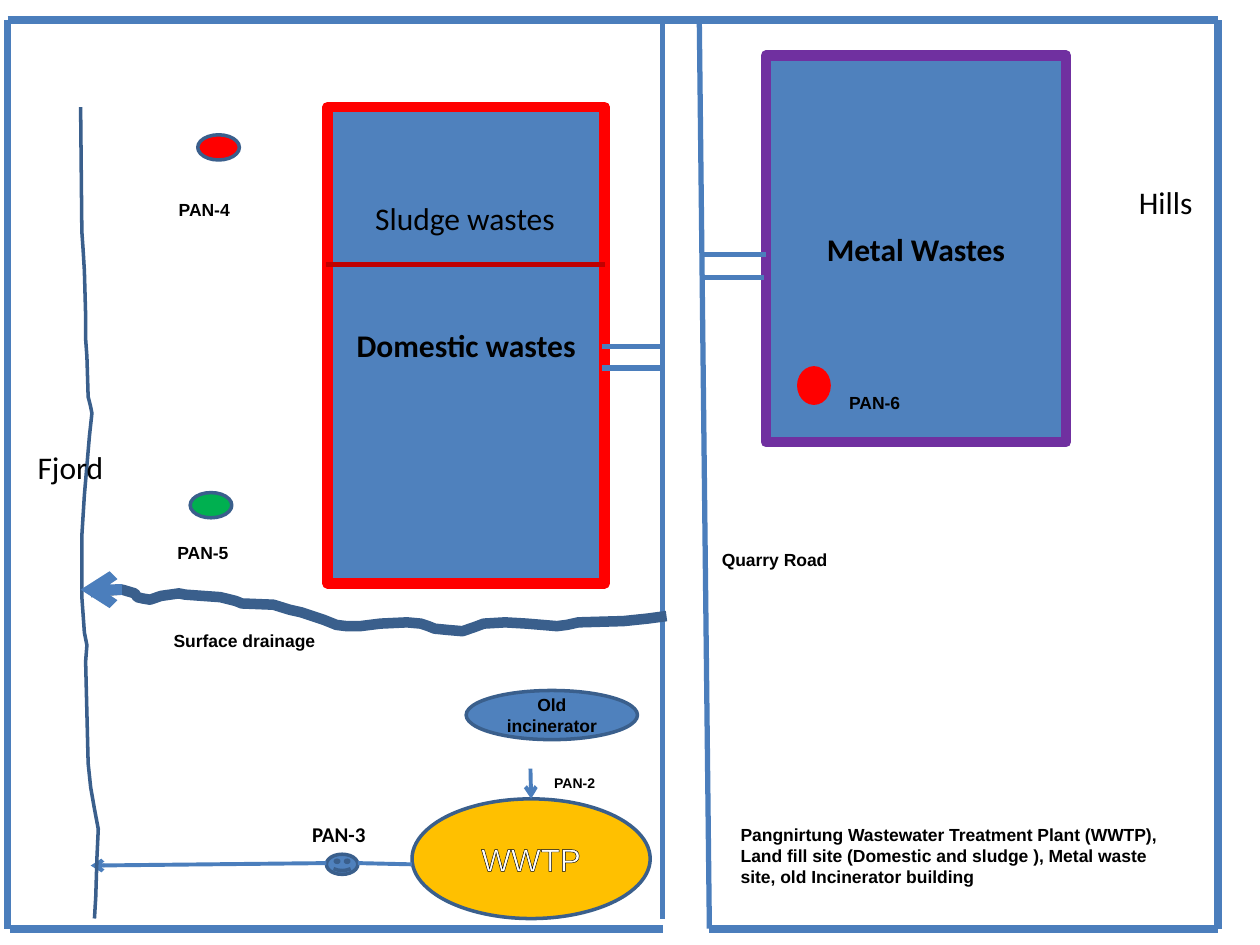
from typing import NamedTuple, Optional

from lxml.etree import SubElement
from pptx import Presentation
from pptx.dml.color import RGBColor
from pptx.enum.shapes import MSO_CONNECTOR, MSO_SHAPE
from pptx.enum.text import MSO_ANCHOR, MSO_AUTO_SIZE, PP_ALIGN
from pptx.oxml.ns import qn
from pptx.util import Inches, Pt

HUES = {
    "blue": "4F81BD", "line": "4B7EBC", "edge": "3A5F8C", "red": "FF0000",
    "plum": "7030A0", "green": "00B050", "gold": "FFC000", "dark": "C00000",
    "black": "000000", "white": "FFFFFF",
}
TOP, BASE, WEST, EAST, ROAD = 0.16, 7.37, 0.06, 9.67, 5.26


class Label(NamedTuple):
    text: str
    size: float = 10
    font: str = "Arial"
    bold: bool = True
    hue: str = "black"


class Site(NamedTuple):
    kind: MSO_SHAPE
    box: tuple
    fill: str
    edge: str = "edge"
    width: float = 2
    label: Optional[Label] = None


class Stroke(NamedTuple):
    start: tuple
    end: tuple
    width: float = 3
    hue: str = "line"
    arrow: bool = False


class Note(NamedTuple):
    box: tuple
    label: Label
    wrap: bool = False


class Trace(NamedTuple):
    points: list
    width: float


SITES = [
    Site(MSO_SHAPE.RECTANGLE, (2.6, 0.85, 2.2, 3.78), "blue", "red", 6,
         Label("Domestic wastes", 18, "Calibri")),
    Site(MSO_SHAPE.RECTANGLE, (6.08, 0.44, 2.38, 3.07), "blue", "plum", 6,
         Label("Metal Wastes", 18, "Calibri")),
    Site(MSO_SHAPE.OVAL, (1.51, 3.91, 0.33, 0.2), "green"),
    Site(MSO_SHAPE.OVAL, (1.57, 1.07, 0.33, 0.2), "red"),
    Site(MSO_SHAPE.OVAL, (6.34, 2.92, 0.24, 0.28), "red", "red"),
    Site(MSO_SHAPE.SMILEY_FACE, (2.59, 6.78, 0.25, 0.16), "blue"),
    Site(MSO_SHAPE.OVAL, (3.7, 5.48, 1.36, 0.39), "blue",
         label=Label("Old incinerator")),
]
PLANT = Site(MSO_SHAPE.OVAL, (3.27, 6.34, 1.89, 0.95), "gold",
             label=Label("WWTP", 18, bold=False, hue="white"))
STROKES = [
    Stroke((ROAD, TOP), (ROAD, 7.29)),
    Stroke((5.55, TOP), (5.63, BASE)),
    *[Stroke((4.78, y), (ROAD, y)) for y in (2.75, 2.92)],
    *[Stroke((5.59, y), (x, y)) for x, y in ((6.08, 2.02), (6.06, 2.2))],
    Stroke((2.59, 2.1), (4.8, 2.1), hue="dark"),
    Stroke((WEST, TOP), (EAST, TOP), 4.5),
    *[Stroke((x, TOP), (x, BASE), 4.5) for x in (WEST, EAST)],
    Stroke((0.08, BASE), (ROAD, BASE), 4.5),
    Stroke((5.63, BASE), (EAST, BASE), 4.5),
    Stroke((2.59, 6.85), (0.72, 6.87), 2.25, arrow=True),
    Stroke((2.84, 6.85), (3.27, 6.86), 2.25),
]
MOUTH = Stroke((0.97, 4.68), (0.64, 4.68), 6, arrow=True)
FEED = Stroke((4.21, 6.1), (4.21, 6.34), 2.25, arrow=True)
SHORE = Trace([
    (0.64, 0.85), (0.65, 1.84), (0.66, 1.98), (0.67, 2.15), (0.68, 2.5),
    (0.68, 2.69), (0.69, 2.83), (0.7, 3.15), (0.72, 3.23), (0.73, 3.28),
    (0.71, 3.46), (0.67, 3.93), (0.65, 4.25), (0.65, 4.74), (0.67, 5.02),
    (0.69, 5.12), (0.68, 5.25), (0.7, 6.06), (0.72, 6.25), (0.75, 6.42),
    (0.78, 6.58), (0.77, 6.8), (0.76, 7.12), (0.75, 7.29),
], 2)
DRAIN = Trace([
    (5.29, 4.89), (5.14, 4.91), (4.95, 4.93), (4.59, 4.94), (4.5, 4.96),
    (4.42, 4.97), (4.18, 4.95), (4.01, 4.94), (3.84, 4.95), (3.76, 4.98),
    (3.67, 5.01), (3.55, 5), (3.45, 4.99), (3.4, 4.97), (3.34, 4.95),
    (3.23, 4.94), (3.02, 4.95), (2.86, 4.97), (2.75, 4.97), (2.67, 4.96),
    (2.57, 4.92), (2.39, 4.86), (2.3, 4.84), (2.17, 4.8), (1.92, 4.79),
    (1.87, 4.77), (1.75, 4.74), (1.47, 4.72), (1.42, 4.71), (1.28, 4.73),
    (1.19, 4.76), (1.13, 4.75), (1.09, 4.74), (1.07, 4.71), (0.97, 4.68),
    (0.83, 4.69), (0.72, 4.7),
], 6)
NOTES = [
    Note((2.88, 1.53, 1.64, 0.4), Label("Sludge wastes", 18, "Calibri", False)),
    Note((0.2, 3.51, 0.73, 0.4), Label("Fjord", 18, "Calibri", False)),
    Note((8.94, 1.4, 0.63, 0.4), Label("Hills", 18, "Calibri", False)),
    Note((4.3, 6.1, 0.54, 0.24), Label("PAN-2", 8)),
    Note((2.38, 6.47, 0.63, 0.3), Label("PAN-3", 12, "Calibri")),
    Note((1.32, 1.53, 0.62, 0.27), Label("PAN-4")),
    Note((1.31, 4.25, 0.77, 0.27), Label("PAN-5"), True),
    Note((6.64, 3.06, 0.62, 0.27), Label("PAN-6")),
    Note((1.28, 4.95, 1.33, 0.27), Label("Surface drainage")),
    Note((5.63, 4.31, 1.05, 0.27), Label("Quarry Road")),
    Note((5.78, 6.49, 3.67, 0.61), Label(
        "Pangnirtung Wastewater Treatment Plant (WWTP), Land fill site "
        "(Domestic and sludge ), Metal waste site, old Incinerator building"), True),
]


def tint(name: str) -> RGBColor:
    return RGBColor.from_string(HUES[name])


def ink(line, hue: str, width: float) -> None:
    line.color.rgb = tint(hue)
    line.width = Pt(width)


def write(frame, label: Label) -> None:
    frame.text = label.text
    font = frame.paragraphs[0].runs[0].font
    font.size, font.name, font.bold = Pt(label.size), label.font, label.bold
    font.color.rgb = tint(label.hue)


def add_site(shapes, site: Site):
    shape = shapes.add_shape(site.kind, *map(Inches, site.box))
    shape.shadow.inherit = False
    shape.fill.solid()
    shape.fill.fore_color.rgb = tint(site.fill)
    ink(shape.line, site.edge, site.width)
    if site.label:
        write(shape.text_frame, site.label)
        shape.text_frame.vertical_anchor = MSO_ANCHOR.MIDDLE
        shape.text_frame.paragraphs[0].alignment = PP_ALIGN.CENTER
    return shape


def add_stroke(shapes, stroke: Stroke):
    link = shapes.add_connector(
        MSO_CONNECTOR.STRAIGHT, *map(Inches, stroke.start + stroke.end))
    ink(link.line, stroke.hue, stroke.width)
    props = link.element.spPr
    if stroke.arrow:
        SubElement(props.find(qn("a:ln")), qn("a:tailEnd"), type="arrow")
    SubElement(props, qn("a:effectLst"))
    return link


def add_trace(shapes, trace: Trace) -> None:
    first, *rest = [(Inches(x), Inches(y)) for x, y in trace.points]
    pen = shapes.build_freeform(*first)
    pen.add_line_segments(rest, close=False)
    shape = pen.convert_to_shape()
    shape.shadow.inherit = False
    shape.fill.background()
    ink(shape.line, "edge", trace.width)


def add_note(shapes, note: Note) -> None:
    frame = shapes.add_textbox(*map(Inches, note.box)).text_frame
    frame.word_wrap = note.wrap
    frame.auto_size = MSO_AUTO_SIZE.SHAPE_TO_FIT_TEXT
    write(frame, note.label)


def add_rim(shape, width: float) -> None:
    props = shape.text_frame.paragraphs[0].runs[0].font._element
    rim = props.makeelement(qn("a:ln"), {"w": str(Pt(width))})
    SubElement(SubElement(rim, qn("a:solidFill")), qn("a:srgbClr"), val=HUES["black"])
    props.insert(0, rim)


def main() -> None:
    """Draw the site map of the plant and its waste areas."""
    deck = Presentation()
    deck.slide_width, deck.slide_height = Inches(10), Inches(7.5)
    shapes = deck.slides.add_slide(deck.slide_layouts[6]).shapes
    for site in SITES:
        add_site(shapes, site)
    plant = add_site(shapes, PLANT)
    add_rim(plant, 3)
    for stroke in STROKES:
        add_stroke(shapes, stroke)
    for trace in (SHORE, DRAIN):
        add_trace(shapes, trace)
    add_stroke(shapes, MOUTH)
    add_stroke(shapes, FEED).end_connect(plant, 0)
    for note in NOTES:
        add_note(shapes, note)
    deck.save("out.pptx")


if __name__ == "__main__":
    main()
